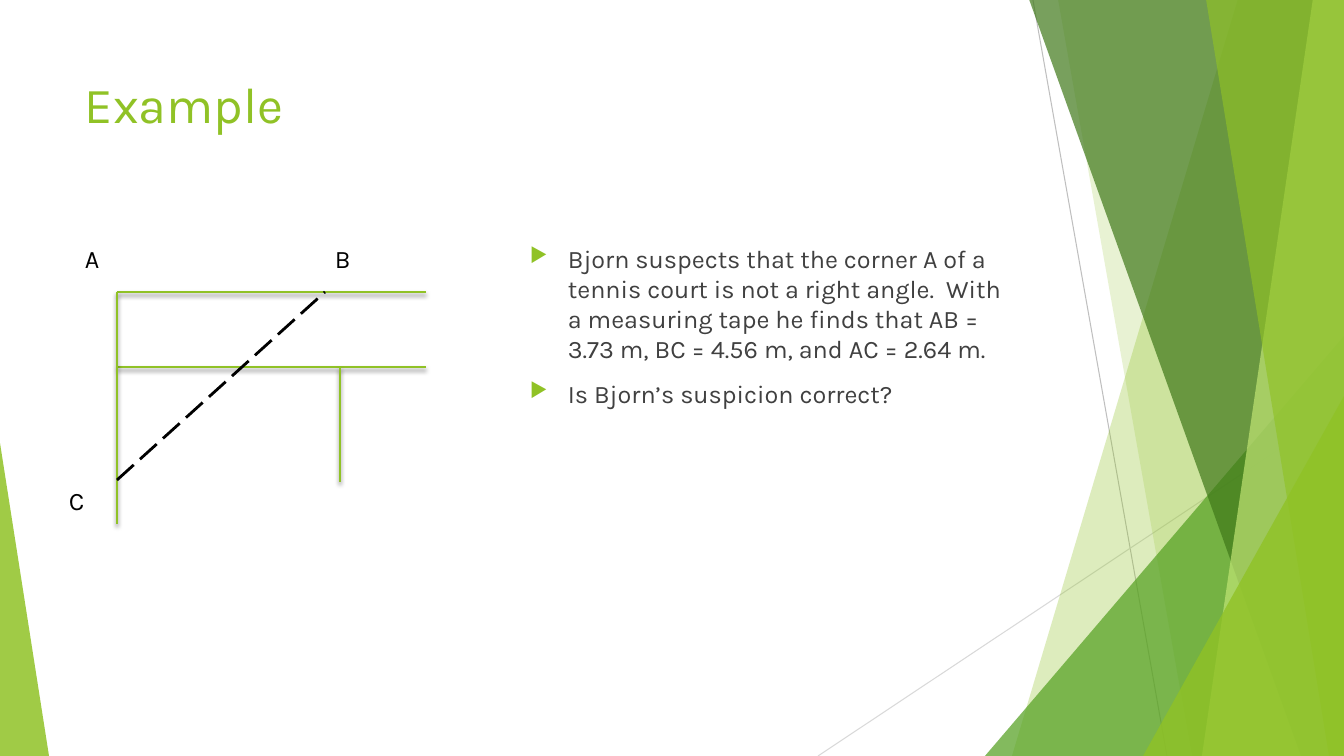
"""Build the tennis court example slide with its green faceted backdrop."""
from dataclasses import dataclass

from lxml import etree
from pptx import Presentation
from pptx import util as u
from pptx.dml.color import RGBColor
from pptx.enum import dml, shapes, text
from pptx.oxml.ns import qn

SCALE = 914400 / 100.8
WIDTH, HEIGHT = 1344, 756


@dataclass(frozen=True)
class Theme:
    font: str = "Karla"
    green: str = "90C226"
    leaf: str = "54A021"
    forest: str = "3F7819"
    lime: str = "C0E474"
    body: str = "404040"
    black: str = "000000"
    grey: str = "BFBFBF"
    pale_grey: str = "D9D9D9"
    title_size: int = 36
    text_size: int = 18
    hairline: float = 0.75
    court_line: float = 2


THEME = Theme()


@dataclass(frozen=True)
class Band:
    top_x: int
    bottom_x: int
    color: str
    alpha: int


@dataclass(frozen=True)
class Wedge:
    x: int
    y: int
    width: int
    apex: int
    color: str
    alpha: int


@dataclass(frozen=True)
class Line:
    x1: int
    y1: int
    x2: int
    y2: int
    color: str = THEME.green
    weight: float = THEME.court_line
    dashed: bool = False
    shadow: bool = False


@dataclass(frozen=True)
class Label:
    name: str
    x: int
    y: int
    width: int


BACK_LINES = [
    Line(1033, 0, 1167, HEIGHT, THEME.grey, THEME.hairline),
    Line(WIDTH, 406, 818, HEIGHT, THEME.pale_grey, THEME.hairline),
]
FACETS = [
    Band(1238, 1012, THEME.green, 30),
    Band(1058, 1192, THEME.green, 20),
    Wedge(985, 336, 359, 1, THEME.leaf, 72),
    Band(1029, 1301, THEME.forest, 70),
    Band(1313, 1202, THEME.lime, 70),
    Band(1206, 1329, THEME.green, 65),
    Wedge(1143, 396, 201, 1, THEME.green, 80),
    Wedge(0, 443, 49, 0, THEME.green, 85),
]
COURT_LINES = [
    Line(117, 292, 426, 292, shadow=True),
    Line(117, 367, 426, 367, shadow=True),
    Line(117, 292, 117, 524, shadow=True),
    Line(340, 367, 340, 482, shadow=True),
    Line(117, 480, 325, 292, THEME.black, dashed=True),
]
LABELS = [Label("A", 75, 238, 42), Label("B", 325, 238, 55), Label("C", 59, 480, 57)]
QUESTION = [
    "Bjorn suspects that the corner A of a tennis court is not a right angle.  With a measuring tape "
    "he finds that AB = 3.73 m, BC = 4.56 m, and AC = 2.64 m.",
    "Is Bjorn’s suspicion correct?",
]


def px(n: int) -> u.Emu:
    """Turn pixels into EMU."""
    return u.Emu(round(n * SCALE))


def add_facet(slide, facet: Band | Wedge) -> None:
    """Draw one translucent backdrop facet."""
    if isinstance(facet, Band):
        builder = slide.shapes.build_freeform(facet.top_x, -1, SCALE)
        builder.add_line_segments([(WIDTH, -1), (WIDTH, HEIGHT), (facet.bottom_x, HEIGHT)])
        sp = builder.convert_to_shape()
    else:
        sp = slide.shapes.add_shape(shapes.MSO_SHAPE.ISOSCELES_TRIANGLE, px(facet.x), px(facet.y),
                                    px(facet.width), px(HEIGHT - facet.y))
        sp.adjustments[0] = facet.apex
    sp.shadow.inherit = False
    sp.line.fill.background()
    sp.fill.solid()
    sp.fill.fore_color.rgb = RGBColor.from_string(facet.color)
    color = sp.element.spPr.find(qn("a:solidFill")).find(qn("a:srgbClr"))
    etree.SubElement(color, qn("a:alpha"), val=str(facet.alpha * 1000))


def add_line(slide, line: Line) -> None:
    """Draw one straight line, dashed or shadowed as described."""
    sp = slide.shapes.add_connector(shapes.MSO_CONNECTOR.STRAIGHT, px(line.x1), px(line.y1),
                                    px(line.x2), px(line.y2))
    sp.line.color.rgb = RGBColor.from_string(line.color)
    sp.line.width = u.Pt(line.weight)
    if line.dashed:
        sp.line.dash_style = dml.MSO_LINE.LONG_DASH
    effects = etree.SubElement(sp.element.spPr, qn("a:effectLst"))
    if line.shadow:
        shadow = etree.SubElement(effects, qn("a:outerShdw"), blurRad=str(u.Pt(3)), dist=str(u.Pt(2)),
                                  dir="5400000", rotWithShape="0")
        color = etree.SubElement(shadow, qn("a:srgbClr"), val=THEME.black)
        etree.SubElement(color, qn("a:alpha"), val="35000")


def add_bullet(p) -> None:
    """Give a paragraph a hanging green triangle bullet."""
    ppr = p._p.get_or_add_pPr()
    ppr.set("marL", str(px(38)))
    ppr.set("indent", str(px(-38)))
    color = etree.SubElement(ppr, qn("a:buClr"))
    etree.SubElement(color, qn("a:srgbClr"), val=THEME.green)
    etree.SubElement(ppr, qn("a:buSzPct"), val="80000")
    etree.SubElement(ppr, qn("a:buChar"), char="▶")


def add_text(slide, paragraphs: list[str], *, x: int, y: int, width: int, height: int,
             color: str, size: int = THEME.text_size, bullets: bool = False, grow: bool = False) -> None:
    """Write paragraphs in a top-anchored wrapping text box."""
    tf = slide.shapes.add_textbox(px(x), px(y), px(width), px(height)).text_frame
    tf.word_wrap = True
    tf.vertical_anchor = text.MSO_ANCHOR.TOP
    tf.auto_size = text.MSO_AUTO_SIZE.SHAPE_TO_FIT_TEXT if grow else text.MSO_AUTO_SIZE.NONE
    for i, content in enumerate(paragraphs):
        p = tf.add_paragraph() if i else tf.paragraphs[0]
        if bullets:
            p.space_before = u.Pt(10)
            add_bullet(p)
        r = p.add_run()
        r.text = content
        r.font.name = THEME.font
        r.font.size = u.Pt(size)
        r.font.color.rgb = RGBColor.from_string(color)


def main() -> None:
    """Assemble and save the slide."""
    prs = Presentation()
    prs.slide_width, prs.slide_height = px(WIDTH), px(HEIGHT)
    s = prs.slides.add_slide(prs.slide_layouts[6])
    for line in BACK_LINES:
        add_line(s, line)
    for facet in FACETS:
        add_facet(s, facet)
    add_text(s, ["Example"], x=75, y=68, width=948, height=145, color=THEME.green, size=THEME.title_size)
    add_text(s, QUESTION, x=520, y=238, width=502, height=427, color=THEME.body, bullets=True)
    for line in COURT_LINES:
        add_line(s, line)
    for label in LABELS:
        add_text(s, [label.name], x=label.x, y=label.y, width=label.width, height=40,
                 color=THEME.black, grow=True)
    prs.save("out.pptx")


if __name__ == "__main__":
    main()
